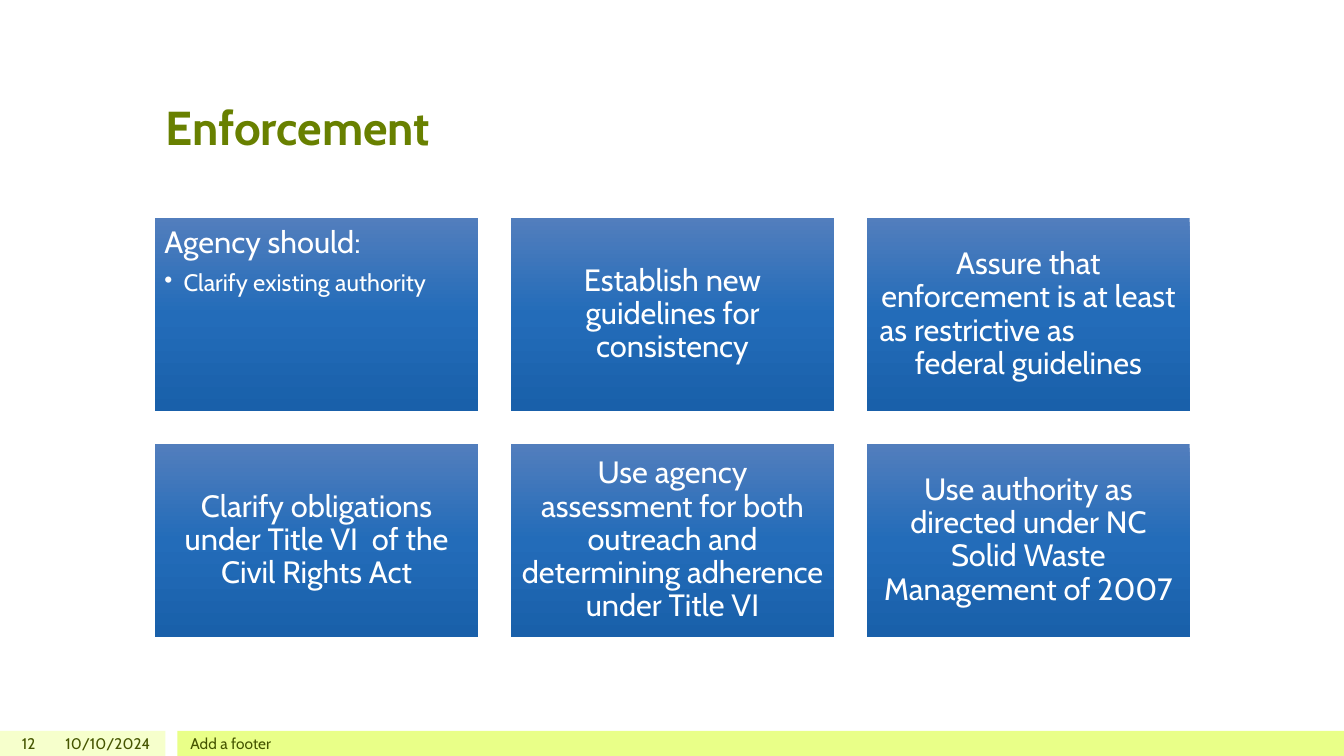
"""Builds the Enforcement slide: a title, a grid of six cards and a footer."""
import copy
import pptx
import pptx.dml.color
import pptx.enum.shapes
import pptx.enum.text
import pptx.oxml
import pptx.oxml.ns
import pptx.util

PX = 9144
FONT = "Cabin"
COLORS = {
    "title": "688000", "foot": "455500", "white": "FFFFFF",
    "pale": "F6FFCC", "lime": "E9FF88",
    "top": "527EBD", "mid": "236CB9", "low": "1960AA",
}
ALIGN = pptx.enum.text.PP_ALIGN
ANCHOR = pptx.enum.text.MSO_ANCHOR
CARDS = [
    ["Agency should:", "Clarify existing authority"],
    ["Establish new guidelines for consistency"],
    ["Assure that enforcement is at least as restrictive as\t federal guidelines"],
    ["Clarify obligations under Title VI  of the Civil Rights Act"],
    ["Use agency assessment for both outreach and determining adherence under Title VI"],
    ["Use authority as directed under NC Solid Waste Management of 2007"],
]


def color(name):
    return pptx.dml.color.RGBColor.from_string(COLORS[name])


def scale(*sizes):
    return [size * PX for size in sizes]


def style(para, size, tint, align=ALIGN.LEFT, bold=False):
    para.alignment = align
    para.font.name = FONT
    para.font.size = pptx.util.Pt(size)
    para.font.bold = bold
    para.font.color.rgb = color(tint)


def add_rect(slide, *area):
    rect = slide.shapes.add_shape(
        pptx.enum.shapes.MSO_SHAPE.RECTANGLE, *scale(*area))
    rect.shadow.inherit = False
    rect.line.fill.background()
    return rect


def add_bar(slide, tint, *area):
    bar = add_rect(slide, *area)
    bar.fill.solid()
    bar.fill.fore_color.rgb = color(tint)


def add_title(slide, text):
    title = slide.shapes.title
    title.left, title.top, title.width, title.height = scale(154, 30, 1025, 129)
    frame = title.text_frame
    frame.text = text
    frame.auto_size = pptx.enum.text.MSO_AUTO_SIZE.NONE
    frame.vertical_anchor = ANCHOR.BOTTOM
    style(frame.paragraphs[0], 34, "title", bold=True)


def add_foot(slide, text, left, width, align):
    frame = slide.shapes.add_textbox(*scale(left, 725, width, 25)).text_frame
    frame.word_wrap = True
    frame.margin_top = frame.margin_bottom = 0
    frame.vertical_anchor = ANCHOR.MIDDLE
    frame.text = text
    style(frame.paragraphs[0], 11, "foot", align)


def shade(rect):
    rect.fill.gradient()
    rect.fill.gradient_angle = 270
    last = rect.fill._fill.gradient_stops[1]._gs
    last.addnext(copy.deepcopy(last))
    tints = [("top", 0), ("mid", 0.5), ("low", 1)]
    for stop, (tint, place) in zip(rect.fill.gradient_stops, tints):
        stop.color.rgb = color(tint)
        stop.position = place


def add_mark(para, tag, **values):
    mark = pptx.oxml.ns.qn(tag)
    node = para._p.get_or_add_pPr().makeelement(mark, values)
    para._p.get_or_add_pPr().append(node)
    return node


def set_bullet(para):
    props = para._p.get_or_add_pPr()
    props.set("marL", str(19 * PX))
    props.set("indent", str(-19 * PX))
    bullet = add_mark(para, "a:buChar", char="•")
    props.find(pptx.oxml.ns.qn("a:defRPr")).addprevious(bullet)


def set_tab(para, place):
    stops = add_mark(para, "a:tabLst")
    stop = stops.makeelement(
        pptx.oxml.ns.qn("a:tab"), {"pos": str(place * PX), "algn": "l"})
    stops.append(stop)
    para._p.pPr.find(pptx.oxml.ns.qn("a:defRPr")).addprevious(stops)


def add_card(slide, lines, left, top):
    card = add_rect(slide, left, top, 320, 192)
    shade(card)
    listed = len(lines) > 1
    frame = card.text_frame
    frame.word_wrap = True
    frame.margin_left = frame.margin_right = 9 * PX
    frame.margin_top = frame.margin_bottom = 9 * PX
    frame.vertical_anchor = ANCHOR.TOP if listed else ANCHOR.MIDDLE
    frame.text = "\n".join(lines)
    for rank, para in enumerate(frame.paragraphs):
        style(para, 17 if rank else 22, "white",
              ALIGN.LEFT if listed else ALIGN.CENTER)
        para.line_spacing = 0.9
        if rank:
            set_bullet(para)
        elif listed:
            para.space_after = pptx.util.Pt(8)
        if "\t" in para.text:
            set_tab(para, 295)


def main():
    deck = pptx.Presentation()
    deck.slide_width, deck.slide_height = scale(1333, 750)
    slide = deck.slides.add_slide(deck.slide_layouts[5])
    add_bar(slide, "pale", 0, 725, 164, 25)
    add_bar(slide, "lime", 176, 725, 1157, 25)
    add_title(slide, "Enforcement")
    add_foot(slide, "12", 0, 45, ALIGN.RIGHT)
    add_foot(slide, "10/10/2024", 50, 109, ALIGN.RIGHT)
    add_foot(slide, "Add a footer", 179, 1000, ALIGN.LEFT)
    for index, lines in enumerate(CARDS):
        row, col = divmod(index, 3)
        add_card(slide, lines, 154 + 353 * col, 216 + 224 * row)
    deck.save("out.pptx")


if __name__ == "__main__":
    main()
